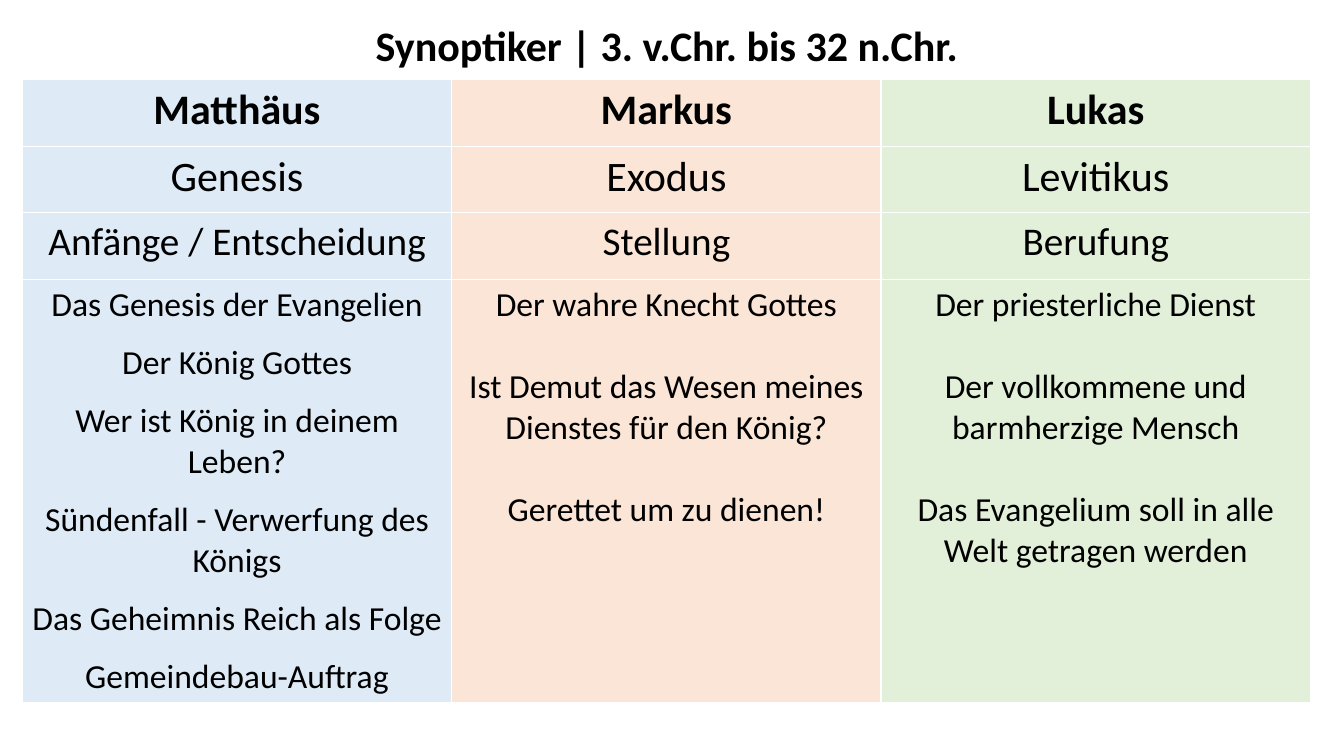
from pptx import Presentation
from pptx.dml.color import RGBColor
from pptx.enum import text
from pptx.util import Pt

TITLE = "Synoptiker | 3. v.Chr. bis 32 n.Chr."
COLORS = {"text": "000000", "Matthäus": "DEEBF7", "Markus": "FBE5D6", "Lukas": "E2F0D9"}

# Each gospel: name, book of the Torah, theme, gap between points, points.
GOSPELS = [
    ("Matthäus", "Genesis", "Anfänge / Entscheidung", 12.2, [
        "Das Genesis der Evangelien",
        "Der König Gottes",
        "Wer ist König in deinem Leben?",
        "Sündenfall - Verwerfung des Königs",
        "Das Geheimnis Reich als Folge",
        "Gemeindebau-Auftrag",
    ]),
    ("Markus", "Exodus", "Stellung", 29.3, [
        "Der wahre Knecht Gottes",
        "Ist Demut das Wesen meines\nDienstes für den König?",
        "Gerettet um zu dienen!",
    ]),
    ("Lukas", "Levitikus", "Berufung", 29.3, [
        "Der priesterliche Dienst",
        "Der vollkommene und barmherzige Mensch",
        "Das Evangelium soll in alle Welt getragen werden",
    ]),
]

LEFT, TOP, COLUMN_WIDTH = 16, 57, 306.7
ROW_HEIGHTS = [47.5, 47.5, 47.5, 297.4]


def write(frame, points, size, bold=False, gap=0):
    """Fill a frame with centred points; a newline starts a paragraph without a gap."""
    lines = [(line, gap if index and not part else 0)
             for index, point in enumerate(points)
             for part, line in enumerate(point.split("\n"))]
    for number, (line, space) in enumerate(lines):
        para = frame.add_paragraph() if number else frame.paragraphs[0]
        para.alignment = text.PP_ALIGN.CENTER
        para.space_before = Pt(space)
        span = para.add_run()
        span.text = line
        span.font.name = "Calibri"
        span.font.size = Pt(size)
        span.font.bold = bold
        span.font.color.rgb = RGBColor.from_string(COLORS["text"])


def add_title(page):
    box = page.shapes.title
    box.left, box.top, box.width, box.height = Pt(259), Pt(10), Pt(435), Pt(44)
    box.text_frame.word_wrap = False
    box.text_frame.auto_size = text.MSO_AUTO_SIZE.NONE
    write(box.text_frame, [TITLE], 30, bold=True)


def add_gospel_table(page):
    table = page.shapes.add_table(
        len(ROW_HEIGHTS), len(GOSPELS), Pt(LEFT), Pt(TOP),
        Pt(COLUMN_WIDTH * len(GOSPELS)), Pt(sum(ROW_HEIGHTS))).table
    for row, height in zip(table.rows, ROW_HEIGHTS):
        row.height = Pt(height)
    for column, (name, book, theme, gap, points) in enumerate(GOSPELS):
        table.columns[column].width = Pt(COLUMN_WIDTH)
        entries = [([name], 30), ([book], 30), ([theme], 28), (points, 24)]
        for row, (lines, size) in enumerate(entries):
            cell = table.cell(row, column)
            cell.fill.solid()
            cell.fill.fore_color.rgb = RGBColor.from_string(COLORS[name])
            write(cell.text_frame, lines, size, bold=row == 0, gap=gap)


def main():
    deck = Presentation()
    deck.slide_width, deck.slide_height = Pt(960), Pt(540)
    page = deck.slides.add_slide(deck.slide_layouts.get_by_name("Title Only"))
    add_title(page)
    add_gospel_table(page)
    deck.save("out.pptx")


if __name__ == "__main__":
    main()
